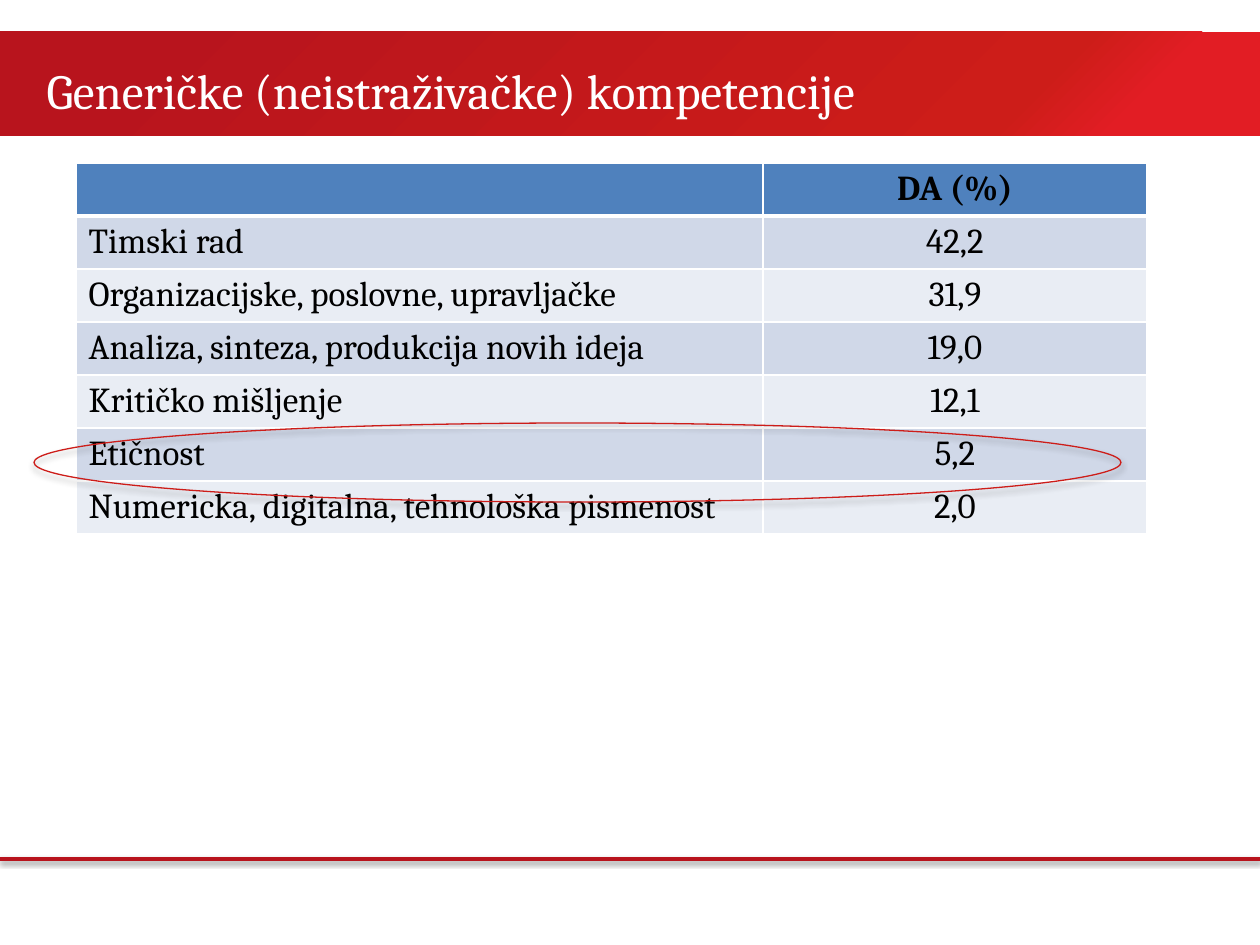
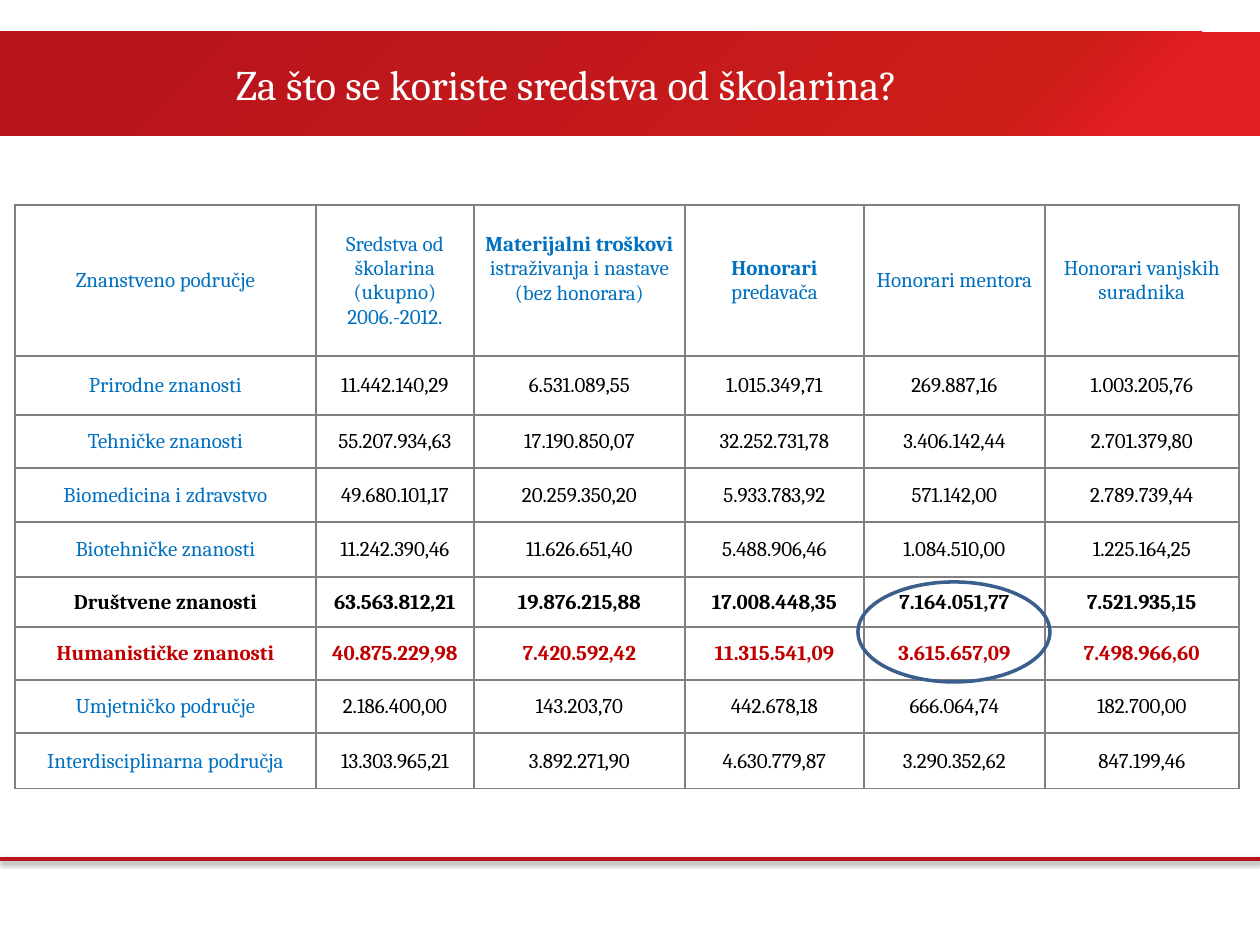
from copy import deepcopy
from dataclasses import dataclass
from itertools import accumulate

from lxml import etree
from pptx import Presentation, util as u
from pptx.dml.color import RGBColor
from pptx.enum import shapes, text
from pptx.oxml import ns

SCALE = 914400 / 126
FONT = "Cambria"
LEFT, MID = text.PP_ALIGN.LEFT, text.PP_ALIGN.CENTER

WHITE = RGBColor(0xFF, 0xFF, 0xFF)
BLACK = RGBColor(0, 0, 0)
BRIGHT = RGBColor(0xE2, 0x1D, 0x24)
RED = RGBColor(0xCD, 0x1D, 0x19)
DARK = RGBColor(0xB8, 0x14, 0x1D)
WINE = RGBColor(0xC0, 0, 0)
BLUE = RGBColor(0, 0x70, 0xC0)
STEEL = RGBColor(0x3A, 0x5F, 0x8C)
HEAD = RGBColor(0x4F, 0x81, 0xBD)
TINT = RGBColor(0xD0, 0xD8, 0xE8)
PALE = RGBColor(0xE9, 0xED, 0xF4)
GRAY = RGBColor(0x80, 0x80, 0x80)


@dataclass(frozen=True)
class Box:
    left: int
    top: int
    width: int
    height: int

    def emu(self) -> tuple:
        return px(self.left), px(self.top), px(self.width), px(self.height)


@dataclass(frozen=True)
class Row:
    height: int
    cells: tuple
    fill: RGBColor | None = None
    label: RGBColor = BLACK
    value: RGBColor = BLACK
    bold: bool = False
    rule: int = 1


@dataclass(frozen=True)
class Grid:
    left: int
    top: int
    cols: tuple
    size: int
    edge: RGBColor
    align: text.PP_ALIGN
    rows: tuple
    tight: bool = False


@dataclass(frozen=True)
class Title:
    words: str
    box: Box
    size: int
    align: text.PP_ALIGN


@dataclass(frozen=True)
class Ring:
    box: Box
    color: RGBColor
    width: float
    shade: bool = False


@dataclass(frozen=True)
class Page:
    title: Title
    grid: Grid
    ring: Ring


def px(size: int) -> u.Emu:
    return u.Emu(round(size * SCALE))


def shade(shape, alpha: int, gap: float) -> None:
    props = shape.element.spPr
    old = props.find(ns.qn("a:effectLst"))
    if old is not None:
        props.remove(old)
    glow = etree.SubElement(props, ns.qn("a:effectLst"))
    drop = etree.SubElement(glow, ns.qn("a:outerShdw"), blurRad=str(u.Pt(3.1)),
                            dist=str(u.Pt(gap)), dir="5400000", rotWithShape="0")
    tone = etree.SubElement(drop, ns.qn("a:srgbClr"), val=str(BLACK))
    etree.SubElement(tone, ns.qn("a:alpha"), val=str(alpha * 1000))


def add_frame(layout, slide) -> None:
    band = slide.shapes.add_shape(shapes.MSO_SHAPE.RECTANGLE, *Box(0, 32, 1260, 104).emu())
    band.shadow.inherit = False
    band.line.fill.background()
    band.fill.gradient()
    band.fill.gradient_angle = 135
    stops = band.element.spPr.find(".//" + ns.qn("a:gsLst"))
    stops.append(deepcopy(stops[0]))
    marks = ((BRIGHT, 0.11), (RED, 0.2), (DARK, 0.89))
    for stop, (color, place) in zip(band.fill.gradient_stops, marks):
        stop.color.rgb = color
        stop.position = place
    base = slide.shapes.add_connector(shapes.MSO_CONNECTOR.STRAIGHT,
                                      0, px(859), px(1260), px(859))
    base.line.color.rgb = DARK
    base.line.width = u.Pt(2)
    shade(base, 38, 1.6)
    tree = layout.shapes.element
    tree.insert(2, band.element)
    tree.insert(3, base.element)


def set_font(font, size: int, color: RGBColor, bold: bool = False) -> None:
    font.name = FONT
    font.size = u.Pt(size)
    font.color.rgb = color
    font.bold = bold


def set_title(slide, title: Title) -> None:
    shape = slide.shapes.title
    shape.left, shape.top, shape.width, shape.height = title.box.emu()
    frame = shape.text_frame
    frame.text = title.words
    frame.word_wrap = True
    frame.vertical_anchor = text.MSO_ANCHOR.MIDDLE
    para = frame.paragraphs[0]
    para.alignment = title.align
    set_font(para.font, title.size, WHITE)


def set_edges(cell, color: RGBColor, top: int, base: int) -> None:
    props = cell._tc.get_or_add_tcPr()
    for spot, (side, width) in enumerate((("L", 1), ("R", 1), ("T", top), ("B", base))):
        line = etree.Element(ns.qn(f"a:ln{side}"), w=str(u.Pt(width)))
        fill = etree.SubElement(line, ns.qn("a:solidFill"))
        etree.SubElement(fill, ns.qn("a:srgbClr"), val=str(color))
        props.insert(spot, line)


def set_words(para, words: str) -> None:
    if "*" not in words:
        para.text = words
        return
    for turn, part in enumerate(words.split("*")):
        if part:
            run = para.add_run()
            run.text = part
            run.font.bold = turn % 2 == 1


def add_grid(slide, grid: Grid):
    box = Box(grid.left, grid.top, sum(grid.cols), sum(row.height for row in grid.rows))
    table = slide.shapes.add_table(len(grid.rows), len(grid.cols), *box.emu()).table
    table.first_row = table.horz_banding = False
    ends = [0, *accumulate(grid.cols)]
    for col, start, end in zip(table.columns, ends, ends[1:]):
        col.width = px(end) - px(start)
    above = 1
    for r, row in enumerate(grid.rows):
        table.rows[r].height = px(row.height)
        for c, words in enumerate(row.cells):
            cell = table.cell(r, c)
            if row.fill is None:
                cell.fill.background()
            else:
                cell.fill.solid()
                cell.fill.fore_color.rgb = row.fill
            set_edges(cell, grid.edge, above, row.rule)
            if grid.tight:
                cell.vertical_anchor = text.MSO_ANCHOR.MIDDLE
                cell.margin_left = cell.margin_right = cell.margin_top = px(1)
                cell.margin_bottom = 0
            para = cell.text_frame.paragraphs[0]
            set_words(para, words)
            para.alignment = MID if c else grid.align
            set_font(para.font, grid.size, row.value if c else row.label, row.bold)
        above = row.rule
    return table


def add_ring(slide, ring: Ring) -> None:
    shape = slide.shapes.add_shape(shapes.MSO_SHAPE.OVAL, *ring.box.emu())
    shape.fill.background()
    shape.line.color.rgb = ring.color
    shape.line.width = u.Pt(ring.width)
    shape.shadow.inherit = False
    if ring.shade:
        shade(shape, 35, 1.8)


SKILLS = (
    ("Timski rad", "42,2"),
    ("Organizacijske, poslovne, upravljačke", "31,9"),
    ("Analiza, sinteza, produkcija novih ideja", "19,0"),
    ("Kritičko mišljenje", "12,1"),
    ("Etičnost", "5,2"),
    ("Numericka, digitalna, tehnološka pismenost", "2,0"),
)

FUNDS = (
    Row(151, ("Znanstveno područje", "Sredstva od školarina\v(ukupno)\v2006.-2012.",
              "*Materijalni troškovi *istraživanja i nastave (bez honorara)",
              "*Honorari *predavača", "Honorari mentora", "Honorari vanjskih suradnika"),
        label=BLUE, value=BLUE),
    Row(59, ("Prirodne znanosti", "11.442.140,29", "6.531.089,55", "1.015.349,71",
             "269.887,16", "1.003.205,76"), label=BLUE),
    Row(53, ("Tehničke znanosti", "55.207.934,63", "17.190.850,07", "32.252.731,78",
             "3.406.142,44", "2.701.379,80"), label=BLUE),
    Row(54, ("Biomedicina i zdravstvo", "49.680.101,17", "20.259.350,20", "5.933.783,92",
             "571.142,00", "2.789.739,44"), label=BLUE),
    Row(55, ("Biotehničke znanosti", "11.242.390,46", "11.626.651,40", "5.488.906,46",
             "1.084.510,00", "1.225.164,25"), label=BLUE),
    Row(50, ("Društvene znanosti", "63.563.812,21", "19.876.215,88", "17.008.448,35",
             "7.164.051,77", "7.521.935,15"), bold=True),
    Row(53, ("Humanističke znanosti", "40.875.229,98", "7.420.592,42", "11.315.541,09",
             "3.615.657,09", "7.498.966,60"), label=WINE, value=WINE, bold=True),
    Row(53, ("Umjetničko područje", "2.186.400,00", "143.203,70", "442.678,18",
             "666.064,74", "182.700,00"), label=BLUE),
    Row(56, ("Interdisciplinarna područja", "13.303.965,21", "3.892.271,90", "4.630.779,87",
             "3.290.352,62", "847.199,46"), label=BLUE),
)

PAGES = (
    Page(
        Title("Generičke (neistraživačke) kompetencije", Box(34, 49, 1079, 82), 28, LEFT),
        Grid(76, 163, (687, 384), 20, WHITE, LEFT,
             (Row(53, ("", "DA (%)"), HEAD, bold=True, rule=3),
              *(Row(53, pair, PALE if i % 2 else TINT) for i, pair in enumerate(SKILLS)))),
        Ring(Box(34, 423, 1087, 79), RED, 0.75, shade=True),
    ),
    Page(
        Title("Za što se koriste sredstva od školarina?", Box(29, 45, 1075, 78), 24, MID),
        Grid(15, 205, (301, 158, 211, 179, 181, 194), 12, GRAY, MID, FUNDS, tight=True),
        Ring(Box(858, 582, 192, 100), STEEL, 2),
    ),
)


def main() -> None:
    deck = Presentation()
    deck.slide_width, deck.slide_height = px(1260), px(945)
    layout = deck.slide_layouts[5]
    for page in PAGES:
        slide = deck.slides.add_slide(layout)
        if page is PAGES[0]:
            add_frame(layout, slide)
        set_title(slide, page.title)
        table = add_grid(slide, page.grid)
        add_ring(slide, page.ring)
    table.cell(0, 2).margin_bottom = px(24)
    deck.save("out.pptx")


if __name__ == "__main__":
    main()
